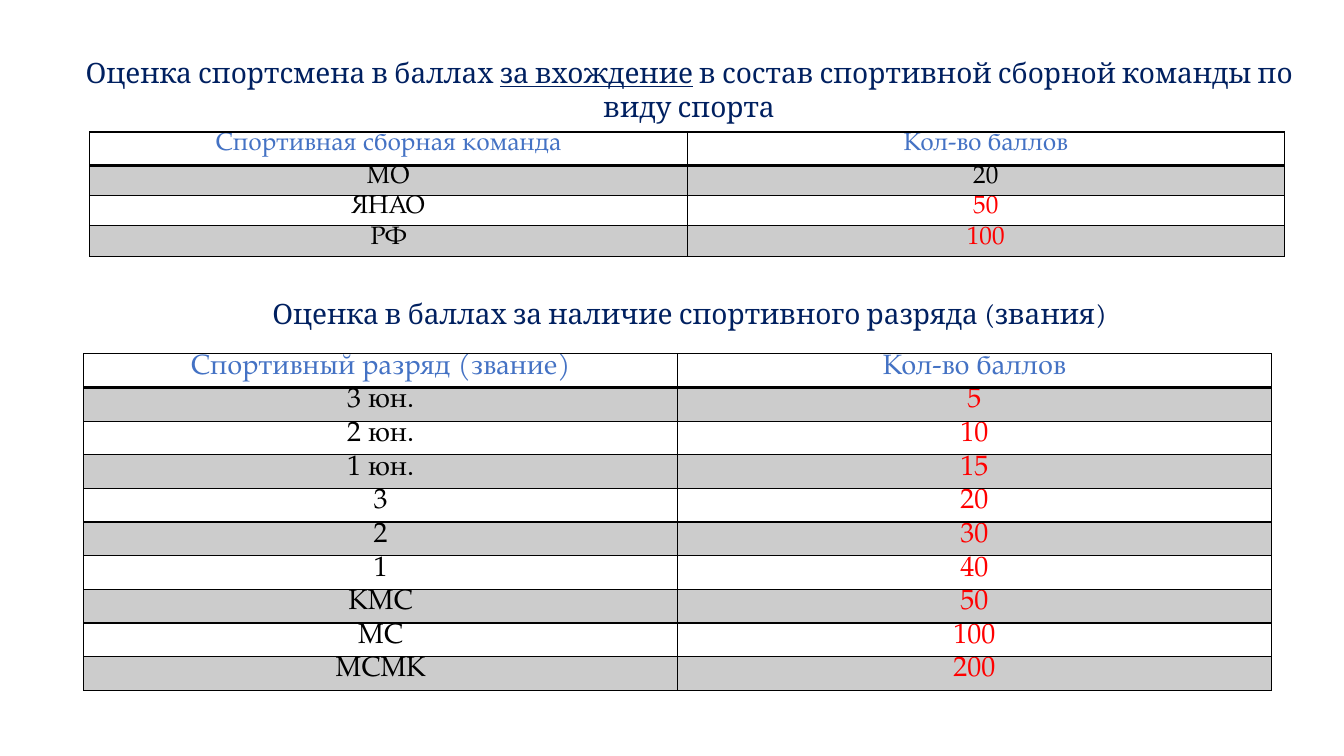
from lxml import etree
from pptx import Presentation
from pptx.dml.color import RGBColor
from pptx.enum import text
from pptx.oxml import ns
from pptx.util import Pt

PX = 9144
NAVY, BLUE, BLACK, RED = "002060", "4472C4", "000000", "FF0000"

TEAMS = [("МО", "20"), ("ЯНАО", "50"), ("РФ", "100")]
RANKS = [("3 юн.", "5"), ("2 юн.", "10"), ("1 юн.", "15"),
         ("3", "20"), ("2", "30"), ("1", "40"),
         ("КМС", "50"), ("МС", "100"), ("МСМК", "200")]


def rgb(value):
    return RGBColor.from_string(value)


class ScoreSlide:
    heading_font = "Cambria"
    table_font = "TeX Gyre Pagella"

    def __init__(self, prs):
        self.slide = prs.slides.add_slide(prs.slide_layouts[5])

    def style(self, p, size, font, color):
        p.alignment = text.PP_ALIGN.CENTER
        p.space_after = Pt(11.2)
        for r in p.runs:
            r.font.size = Pt(size)
            r.font.name = font
            r.font.bold = False
            r.font.color.rgb = rgb(color)

    def heading(self, sp, box, parts, underlined=None):
        sp.left, sp.top, sp.width, sp.height = (n * PX for n in box)
        tf = sp.text_frame
        tf.word_wrap = True
        tf.auto_size = text.MSO_AUTO_SIZE.SHAPE_TO_FIT_TEXT
        tf.vertical_anchor = text.MSO_ANCHOR.TOP
        p = tf.paragraphs[0]
        for part in parts:
            r = p.add_run()
            r.text = part
            if part == underlined:
                r.font.underline = True
        self.style(p, 20, self.heading_font, NAVY)

    def title(self, box, parts, underlined):
        self.heading(self.slide.shapes.title, box, parts, underlined)

    def subtitle(self, box, line):
        sp = self.slide.shapes.add_textbox(*(n * PX for n in box))
        self.heading(sp, box, [line])

    def borders(self, cell, bottom):
        tc_pr = cell._tc.get_or_add_tcPr()
        for side, width in (("L", 1), ("R", 1), ("T", 1), ("B", bottom)):
            ln = etree.SubElement(tc_pr, ns.qn("a:ln" + side), w=str(Pt(width)))
            fill = etree.SubElement(ln, ns.qn("a:solidFill"))
            etree.SubElement(fill, ns.qn("a:srgbClr"), val=BLACK)

    def shade(self, cell):
        """Fill a cell with black at 20 % opacity."""
        cell.fill.solid()
        cell.fill.fore_color.rgb = rgb(BLACK)
        color = cell._tc.tcPr.find(".//" + ns.qn("a:solidFill") + "/" + ns.qn("a:srgbClr")
                                   + "[last()]")
        color = cell._tc.tcPr.find(ns.qn("a:solidFill")).find(ns.qn("a:srgbClr"))
        etree.SubElement(color, ns.qn("a:alpha"), val="20000")

    def table(self, box, header, rows, size, row_height, plain=()):
        """Add a two-column score table; scores of the rows in plain stay black."""
        lines = [header] + rows
        frame = self.slide.shapes.add_table(len(lines), 2, *(n * PX for n in box))
        table = frame.table
        table.horz_banding = False
        for i, line in enumerate(lines):
            table.rows[i].height = (row_height if i else 33) * PX
            for j, value in enumerate(line):
                cell = table.cell(i, j)
                cell.margin_left = cell.margin_right = 7 * PX
                cell.margin_top = cell.margin_bottom = 0
                self.borders(cell, 1 if i else 2)
                if i % 2:
                    self.shade(cell)
                else:
                    cell.fill.background()
                cell.text = value
                color = RED if j and line[0] not in plain else BLACK
                self.style(cell.text_frame.paragraphs[0], size, self.table_font,
                           color if i else BLUE)


def main():
    prs = Presentation()
    prs.slide_width, prs.slide_height = 1333 * PX, 750 * PX
    s = ScoreSlide(prs)
    entry = "за вхождение"
    s.title((63, 50, 1241, 43),
            ["Оценка спортсмена в баллах ", entry,
             " в состав спортивной сборной команды по виду спорта"], entry)
    s.table((89, 131, 1185, 123), ("Спортивная сборная команда", "Кол-во баллов"),
            TEAMS, 18, 30, plain=("МО",))
    s.subtitle((236, 289, 895, 43),
               "Оценка в баллах за наличие спортивного разряда (звания)")
    s.table((83, 351, 1178, 333), ("Спортивный разряд (звание)", "Кол-во баллов"),
            RANKS, 20, 33)
    prs.save("out.pptx")


if __name__ == "__main__":
    main()
